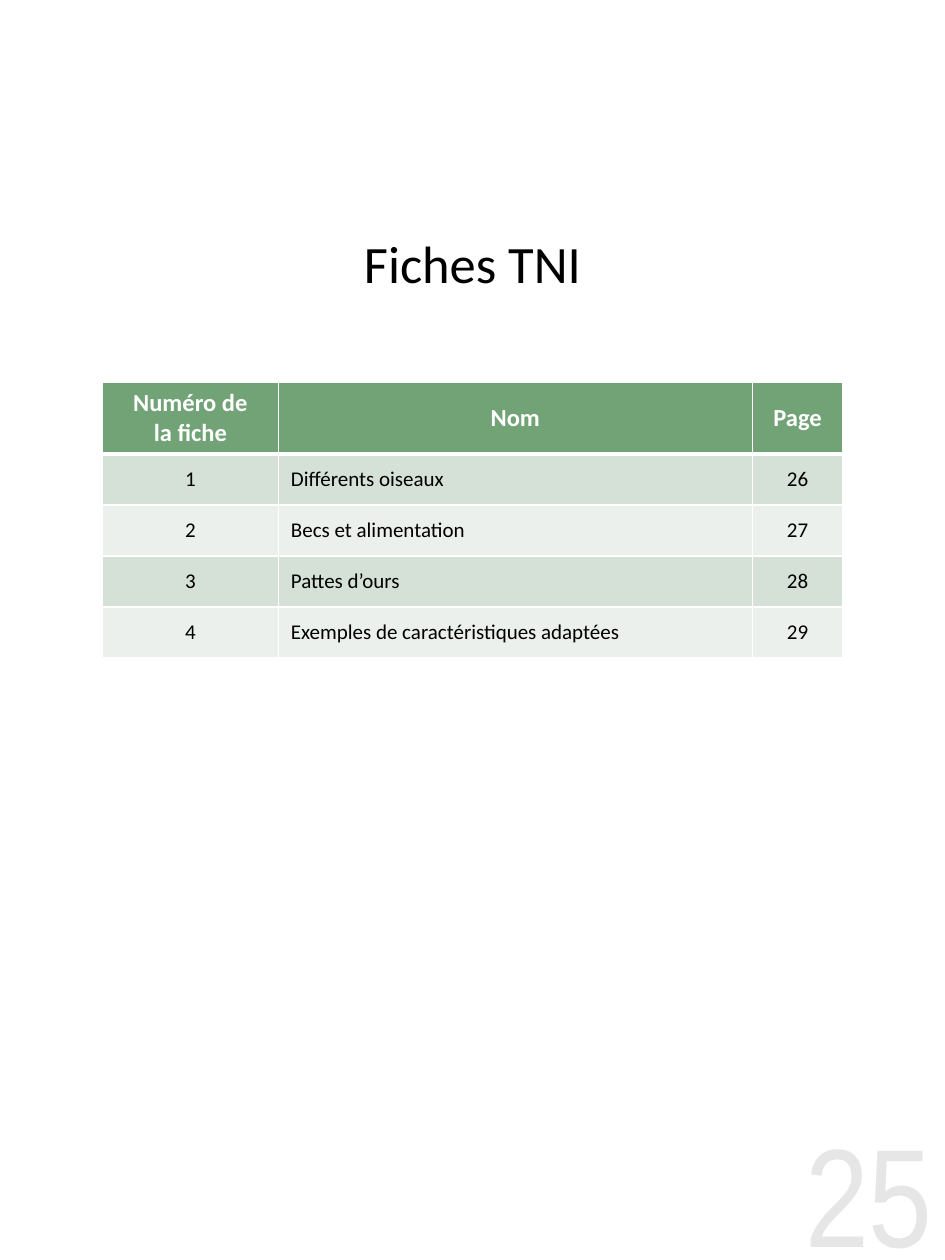
import pptx
import pptx.util
import pptx.dml.color
import pptx.enum.text
import pptx.oxml
import pptx.oxml.ns

Pt = pptx.util.Pt
ALIGN = pptx.enum.text.PP_ALIGN
MIDDLE = pptx.enum.text.MSO_ANCHOR.MIDDLE
COLORS = {"white": "FFFFFF", "black": "000000", "green": "72A376",
          "band_dark": "D5E0D6", "band_light": "EBF0EC", "page_gray": "E6E6E6"}

HEADER = ["Numéro de\nla fiche", "Nom", "Page"]
SHEETS = [("Différents oiseaux", 26), ("Becs et alimentation", 27),
          ("Pattes d’ours", 28), ("Exemples de caractéristiques adaptées", 29)]


def rgb(name):
    return pptx.dml.color.RGBColor.from_string(COLORS[name])


def write(tf, text, size, color, align, bold=False, font="Calibri"):
    """Write one paragraph for each line of text."""
    for i, line in enumerate(text.split("\n")):
        p = tf.paragraphs[0] if i == 0 else tf.add_paragraph()
        p.alignment = align
        r = p.add_run()
        r.text = line
        r.font.name = font
        r.font.size = Pt(size)
        r.font.bold = bold
        r.font.color.rgb = rgb(color)


def set_borders(cell, widths):
    """Draw white borders; widths are left, right, top, bottom in points."""
    tcPr = cell._tc.get_or_add_tcPr()
    for side, width in zip("LRTB", widths):
        tcPr.append(pptx.oxml.parse_xml(
            f'<a:ln{side} {pptx.oxml.ns.nsdecls("a")} w="{Pt(width)}"><a:solidFill>'
            f'<a:srgbClr val="{COLORS["white"]}"/></a:solidFill></a:ln{side}>'))


def add_title(s, x, y, w, h):
    sp = s.shapes.title
    sp.left, sp.top, sp.width, sp.height = Pt(x), Pt(y), Pt(w), Pt(h)
    sp.fill.solid()
    sp.fill.fore_color.rgb = rgb("white")
    tf = sp.text_frame
    tf.word_wrap = True
    tf.vertical_anchor = MIDDLE
    write(tf, "Fiches TNI", 30, "black", ALIGN.CENTER)


def add_sheet_table(s, x, y, w, h):
    rows = [HEADER] + [[str(n), name, str(page)]
                       for n, (name, page) in enumerate(SHEETS, 1)]
    table = s.shapes.add_table(len(rows), 3, Pt(x), Pt(y), Pt(w), Pt(h)).table
    number_w, page_w, header_h = 100.6, 51.8, 41.2
    for col, width in zip(table.columns, (number_w, w - number_w - page_w, page_w)):
        col.width = Pt(width)
    for i, values in enumerate(rows):
        header = i == 0
        table.rows[i].height = Pt(header_h if header else (h - header_h) / len(SHEETS))
        fill = "green" if header else "band_dark" if i % 2 else "band_light"
        for j, text in enumerate(values):
            cell = table.cell(i, j)
            cell.vertical_anchor = MIDDLE
            set_borders(cell, (1, 1, 3 if i == 1 else 1, 3 if header else 1))
            cell.fill.solid()
            cell.fill.fore_color.rgb = rgb(fill)
            align = ALIGN.LEFT if j == 1 and not header else ALIGN.CENTER
            write(cell.text_frame, text, 14 if header else 12,
                  "white" if header else "black", align, header)


def add_page_number(s, x, y, w, h):
    tf = s.shapes.add_textbox(Pt(x), Pt(y), Pt(w), Pt(h)).text_frame
    tf.word_wrap = True
    tf.margin_left = tf.margin_right = tf.margin_top = tf.margin_bottom = 0
    write(tf, "25", 80, "page_gray", ALIGN.RIGHT, font="Arial Narrow")


def main():
    prs = pptx.Presentation()
    prs.slide_width, prs.slide_height = Pt(540), Pt(720)
    s = prs.slides.add_slide(prs.slide_layouts[5])
    add_page_number(s, 433, 633, 100, 87)
    add_sheet_table(s, 58.5, 218.2, 423.2, 157.7)
    add_title(s, 190, 126, 160, 47.5)
    prs.save("out.pptx")


if __name__ == "__main__":
    main()
